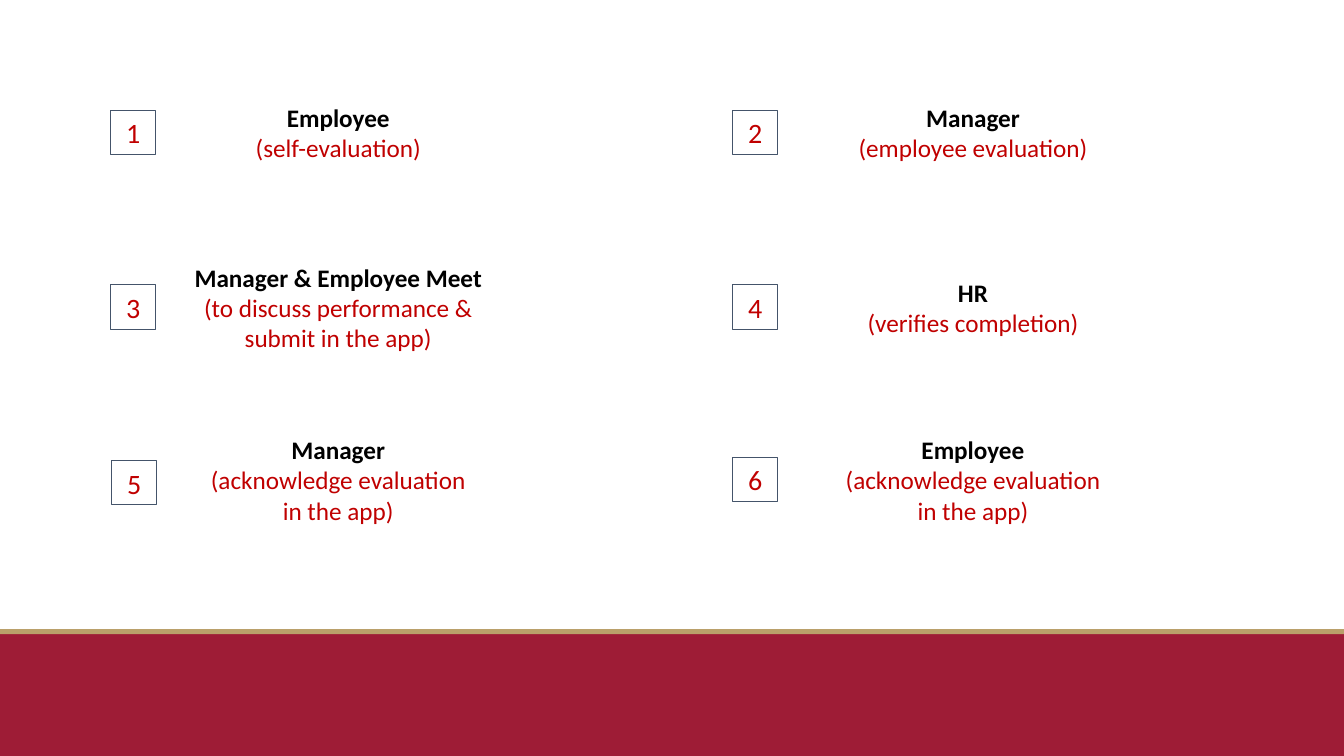
"""Build a slide with the six numbered steps of a performance evaluation."""
from pptx import Presentation
from pptx.dml.color import RGBColor
from pptx.enum.shapes import MSO_SHAPE
from pptx.enum.text import MSO_ANCHOR, PP_ALIGN
from pptx.util import Pt

RECT = MSO_SHAPE.RECTANGLE
MIDDLE = MSO_ANCHOR.MIDDLE
CENTER = PP_ALIGN.CENTER

COLORS = {
    "crimson": "9E1C36",
    "gold": "BAA06A",
    "outline": "44546A",
    "black": "000000",
    "red": "C00000",
}
SLIDE_W, SLIDE_H = 960, 540
BANDS = [("crimson", 452.9, 87.1), ("gold", 449.3, 3.6)]

# (who, what, text width, text height, badge shift)
STEPS = [
    ("Employee", "(self-evaluation)", 140, 51, (0, 0)),
    ("Manager", "(employee evaluation)", 198, 51, (0, 0)),
    ("Manager & Employee Meet", "(to discuss performance & submit in the app)", 234, 73, (0, 0)),
    ("HR", "(verifies completion)", 198, 51, (0, 0)),
    ("Manager", "(acknowledge evaluation in the app)", 196.6, 73, (0.7, 2.2)),
    ("Employee", "(acknowledge evaluation in the app)", 196.6, 73, (0, 0)),
]
BADGE_LEFTS = (79, 523.2)
TEXT_CENTERS = (241.6, 695)
ROW_CENTERS = (94.5, 219.4, 342.7)
BADGE_W, BADGE_H = 32.4, 31.7

FORMATS = {
    "number": ("red", {"size": Pt(20), "bold": False, "name": "Calibri"}),
    "who": ("black", {"size": Pt(18), "bold": True, "name": "Calibri"}),
    "what": ("red", {"size": Pt(18), "bold": False, "name": "Calibri"}),
}


def rgb(name):
    return RGBColor.from_string(COLORS[name])


def add_rect(s, x, y, w, h):
    sp = s.shapes.add_shape(RECT, Pt(x), Pt(y), Pt(w), Pt(h))
    sp.shadow.inherit = False
    return sp


def write(sp, lines):
    tf = sp.text_frame
    tf.word_wrap = True
    tf.vertical_anchor = MIDDLE
    for i, (text, style) in enumerate(lines):
        p = tf.add_paragraph() if i else tf.paragraphs[0]
        p.alignment = CENTER
        r = p.add_run()
        r.text = text
        color, values = FORMATS[style]
        r.font.color.rgb = rgb(color)
        for key, value in values.items():
            setattr(r.font, key, value)


def add_badge(s, number, x, y):
    sp = add_rect(s, x, y, BADGE_W, BADGE_H)
    sp.fill.background()
    sp.line.color.rgb = rgb("outline")
    sp.line.width = Pt(0.75)
    write(sp, [(str(number), "number")])


def main():
    prs = Presentation()
    prs.slide_width, prs.slide_height = Pt(SLIDE_W), Pt(SLIDE_H)
    s = prs.slides.add_slide(prs.slide_layouts[6])

    for color, y, h in BANDS:
        sp = add_rect(s, 0, y, SLIDE_W, h)
        sp.fill.solid()
        sp.fill.fore_color.rgb = rgb(color)
        sp.line.fill.background()

    for i, (who, what, w, h, (dx, dy)) in enumerate(STEPS):
        row, col = divmod(i, 2)
        cy = ROW_CENTERS[row]
        add_badge(s, i + 1, BADGE_LEFTS[col] + dx, cy - BADGE_H / 2 + dy)
        sp = s.shapes.add_textbox(Pt(TEXT_CENTERS[col] - w / 2), Pt(cy - h / 2), Pt(w), Pt(h))
        write(sp, [(who, "who"), (what, "what")])

    prs.save("out.pptx")


if __name__ == "__main__":
    main()
